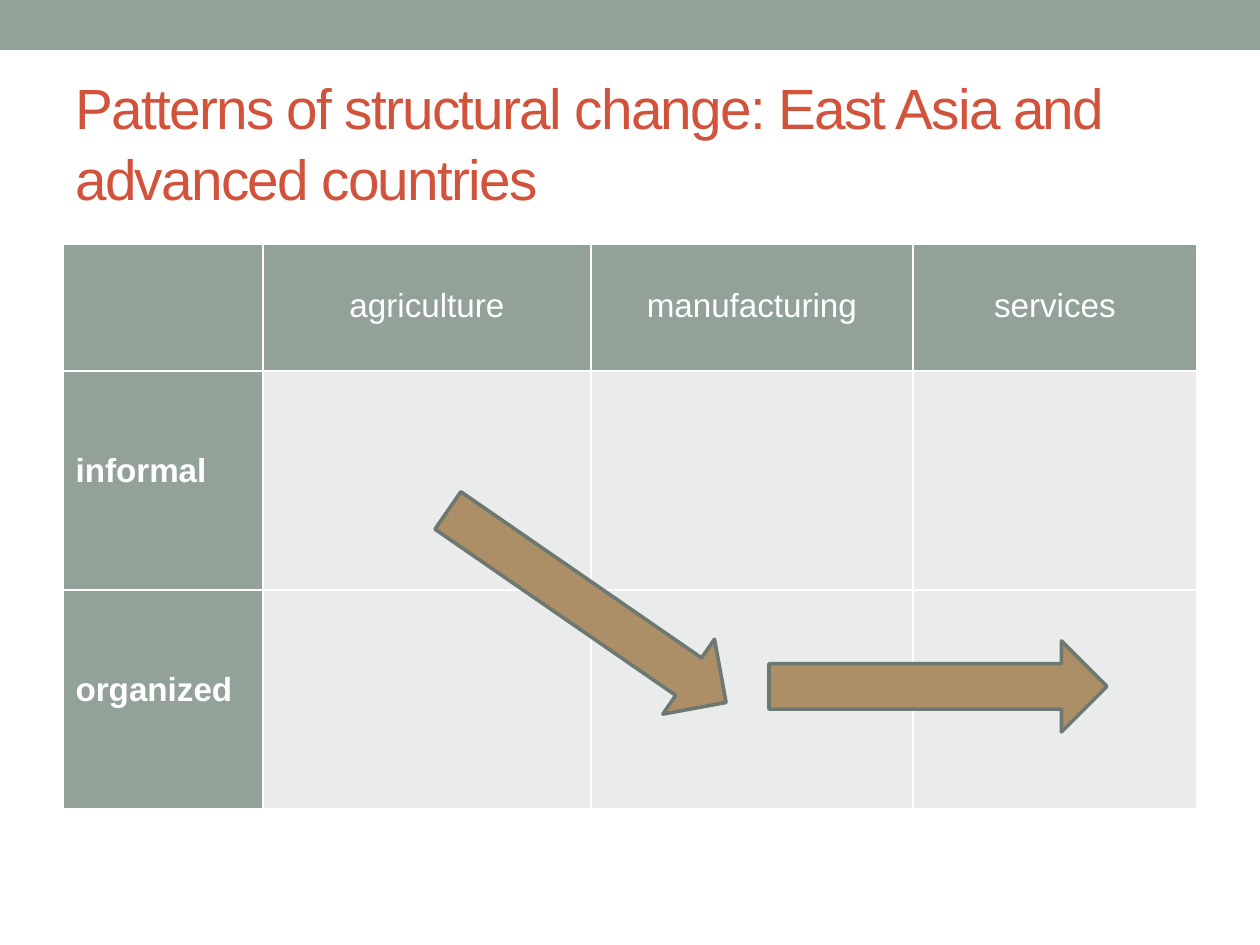
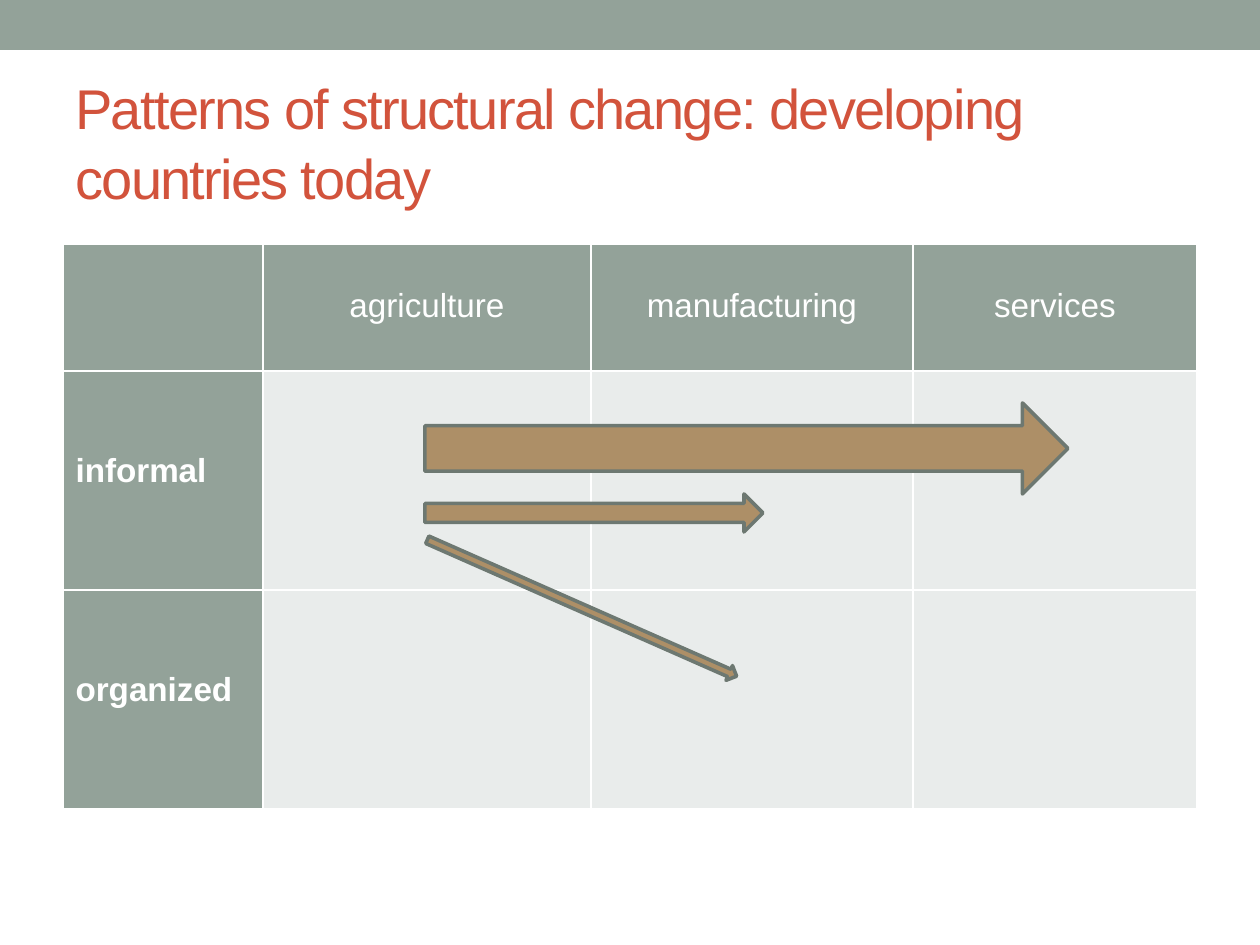
from pptx import Presentation
from pptx.dml.color import RGBColor
from pptx.enum.shapes import MSO_SHAPE
from pptx.enum.text import MSO_ANCHOR, PP_ALIGN
from pptx.oxml import parse_xml
from pptx.oxml.ns import nsdecls
from pptx.util import Emu, Pt

PX = 914400 // 126
FONT = "Arial"
COLORS = {
    "sage": "93A299",
    "pale": "E9ECEB",
    "white": "FFFFFF",
    "title": "D2533C",
    "arrow": "AD8F67",
    "outline": "6D7871",
}

# Boxes are left, top, width, height in px
BAND = (0, 0, 1260, 50)
TITLE = (63, 73, 1134, 136)
GRID = (63, 244, 1134, 566)
COLUMNS = (200, 328, 322, 284)
ROWS = (127, 219, 219)
SECTORS = ("agriculture", "manufacturing", "services")
STATUSES = ("informal", "organized")

# Arrows: box relative to the grid, then rotation in degrees
SLIDES = [
    ("Patterns of structural change: East Asia and advanced countries", 32.4, [
        ((355, 317, 338, 91), 34.6),
        ((706, 397, 338, 91), 0),
    ]),
    ("Patterns of structural change: developing countries today", 32, [
        ((362, 250, 338, 38), 0),
        ((362, 159, 643, 91), 0),
        ((350, 356, 338, 16), 23.8),
    ]),
]


def px(*lengths):
    return [Emu(n * PX) for n in lengths]


def rgb(name):
    return RGBColor.from_string(COLORS[name])


def add_run(p, text, size, color, bold=False):
    r = p.add_run()
    r.text = text
    r.font.name = FONT
    r.font.size = Pt(size)
    r.font.bold = bold
    r.font.color.rgb = rgb(color)
    return r


def add_filled(s, shape, box, fill):
    sp = s.shapes.add_shape(shape, *px(*box))
    sp.shadow.inherit = False
    sp.fill.solid()
    sp.fill.fore_color.rgb = rgb(fill)
    sp.line.fill.background()
    return sp


def add_title(s, box, text, size):
    tf = s.shapes.add_textbox(*px(*box)).text_frame
    tf.word_wrap = True
    tf.vertical_anchor = MSO_ANCHOR.MIDDLE
    p = tf.paragraphs[0]
    p.line_spacing = 1.04
    r = add_run(p, text, size, "title")
    r.font._element.set("spc", "-100")


def style_cell(cell, fill):
    # Borders come before the fill in the cell properties
    props = cell._tc.get_or_add_tcPr()
    for side in ("lnL", "lnR", "lnT", "lnB"):
        props.append(parse_xml(
            f'<a:{side} {nsdecls("a")} w="{Pt(1)}"><a:solidFill>'
            f'<a:srgbClr val="{COLORS["white"]}"/></a:solidFill></a:{side}>'))
    cell.fill.solid()
    cell.fill.fore_color.rgb = rgb(fill)


def label_cell(cell, text, top, align, bold):
    cell.margin_top = px(top)[0]
    p = cell.text_frame.paragraphs[0]
    p.alignment = align
    add_run(p, text, 19, "white", bold)


def add_grid(s, box):
    table = s.shapes.add_table(len(ROWS), len(COLUMNS), *px(*box)).table
    for column, width in zip(table.columns, px(*COLUMNS)):
        column.width = width
    for row, height in zip(table.rows, px(*ROWS)):
        row.height = height
    for i in range(len(ROWS)):
        for j in range(len(COLUMNS)):
            style_cell(table.cell(i, j), "pale" if i and j else "sage")
    for j, sector in enumerate(SECTORS, 1):
        label_cell(table.cell(0, j), sector, 44, PP_ALIGN.CENTER, False)
    for i, status in enumerate(STATUSES, 1):
        label_cell(table.cell(i, 0), status, 82, PP_ALIGN.LEFT, True)


def add_arrow(s, origin, box, rotation):
    x, y, w, h = box
    sp = add_filled(s, MSO_SHAPE.RIGHT_ARROW,
                    (origin[0] + x, origin[1] + y, w, h), "arrow")
    sp.line.color.rgb = rgb("outline")
    sp.line.width = Pt(2.08)
    sp.rotation = rotation


def add_pattern_slide(prs, title, size, arrows):
    s = prs.slides.add_slide(prs.slide_layouts[6])
    add_filled(s, MSO_SHAPE.RECTANGLE, BAND, "sage")
    add_title(s, TITLE, title, size)
    add_grid(s, GRID)
    for box, rotation in arrows:
        add_arrow(s, GRID[:2], box, rotation)


def main():
    prs = Presentation()
    prs.slide_width, prs.slide_height = px(1260, 945)
    for title, size, arrows in SLIDES:
        add_pattern_slide(prs, title, size, arrows)
    prs.save("out.pptx")


if __name__ == "__main__":
    main()
